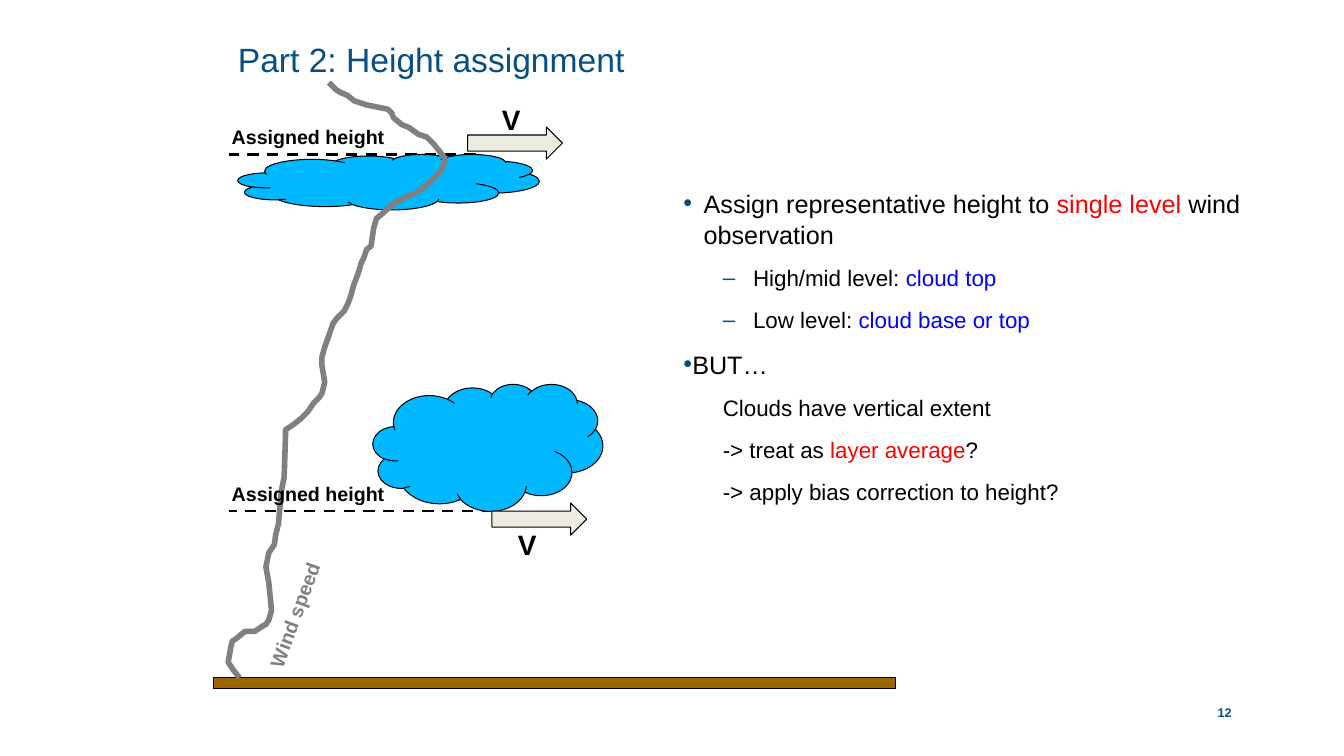
from lxml import etree
from pptx import Presentation
from pptx.dml.color import RGBColor
from pptx.enum.dml import MSO_LINE
from pptx.enum.shapes import MSO_CONNECTOR, MSO_SHAPE
from pptx.enum.text import MSO_ANCHOR, MSO_AUTO_SIZE, PP_ALIGN
from pptx.oxml.ns import qn
from pptx.util import Pt

CLOUD, ARROW, RECTANGLE = MSO_SHAPE.CLOUD, MSO_SHAPE.RIGHT_ARROW, MSO_SHAPE.RECTANGLE
STRAIGHT, DASH = MSO_CONNECTOR.STRAIGHT, MSO_LINE.DASH
TOP, MIDDLE, BOTTOM = MSO_ANCHOR.TOP, MSO_ANCHOR.MIDDLE, MSO_ANCHOR.BOTTOM
NO_RESIZE = MSO_AUTO_SIZE.NONE
LEFT, CENTER = PP_ALIGN.LEFT, PP_ALIGN.CENTER

FONT = "Arial"
NAVY = RGBColor(0x06, 0x4E, 0x83)
BLACK = RGBColor(0x00, 0x00, 0x00)
RED = RGBColor(0xFF, 0x00, 0x00)
BLUE = RGBColor(0x00, 0x00, 0xFF)
SKY = RGBColor(0x00, 0xB8, 0xFF)
BROWN = RGBColor(0x99, 0x66, 0x00)
CREAM = RGBColor(0xEE, 0xEC, 0xE1)
GRAY = RGBColor(0x80, 0x80, 0x80)

# Wind speed profile from the ground upwards, in points
WIND_PROFILE = [
    (171, 484), (167, 479), (163, 473), (165, 462), (166, 458), (169, 456),
    (175, 451), (182, 451), (188, 447), (190, 446), (192, 443), (194, 436),
    (193, 426), (192, 416), (190, 405), (192, 395), (194, 392), (196, 389),
    (197, 382), (199, 374), (201, 351), (202, 346), (203, 341), (204, 311),
    (204, 307), (207, 305), (210, 303), (215, 299), (220, 294), (224, 288),
    (228, 284), (230, 281), (232, 273), (230, 261), (230, 255), (232, 248),
    (238, 231), (241, 227), (246, 222), (249, 216), (251, 210), (252, 206),
    (253, 203), (256, 195), (258, 188), (260, 184), (262, 178), (265, 176),
    (267, 163), (269, 156), (274, 152), (276, 150), (283, 144), (288, 142),
    (291, 140), (297, 138), (304, 133), (310, 127), (315, 122), (318, 115),
    (317, 112), (310, 103), (307, 100), (305, 98), (299, 96), (292, 91),
    (287, 89), (281, 84), (280, 81), (277, 78), (262, 75), (253, 72),
    (248, 68), (243, 66), (240, 64), (235, 59),
]

# Level, left margin, first-line indent, bullet, runs
BODY = [
    (0, 14.4, -14.4, "•", [("Assign representative height to ", BLACK),
                           ("single level", RED), (" wind observation", BLACK)]),
    (1, 49.7, -21.6, "–", [("High/mid level: ", BLACK), ("cloud top", BLUE)]),
    (1, 49.7, -21.6, "–", [("Low level:", BLACK), (" cloud base or top", BLUE)]),
    (0, 0, -14.4, "•", [("BUT…", BLACK)]),
    (1, 28.1, 0, None, [("Clouds have vertical extent", BLACK)]),
    (1, 28.1, 0, None, [("-> treat as ", BLACK), ("layer average", RED), ("?", BLACK)]),
    (1, 28.1, 0, None, [("-> apply bias correction to height?", BLACK)]),
]
# Font size, line spacing and space before, by level
LEVEL_STYLES = [(18, 22, 11), (16, 20, 10)]


def place(shape, left, top, width, height):
    shape.left, shape.top = Pt(left), Pt(top)
    shape.width, shape.height = Pt(width), Pt(height)


def clear_frame(frame, anchor):
    frame.margin_left = frame.margin_right = 0
    frame.margin_top = frame.margin_bottom = 0
    frame.word_wrap = True
    frame.auto_size = NO_RESIZE
    frame.vertical_anchor = anchor


def style_font(font, size, color, bold=False):
    font.name, font.size, font.bold = FONT, Pt(size), bold
    font.color.rgb = color


def set_bullet(paragraph, margin, indent, bullet):
    properties = paragraph._p.get_or_add_pPr()
    properties.set("marL", str(Pt(margin)))
    properties.set("indent", str(Pt(indent)))
    if bullet is None:
        etree.SubElement(properties, qn("a:buNone"))
        return
    color = etree.SubElement(properties, qn("a:buClr"))
    etree.SubElement(color, qn("a:srgbClr"), val=str(NAVY))
    etree.SubElement(properties, qn("a:buFont"), typeface=FONT)
    etree.SubElement(properties, qn("a:buChar"), char=bullet)


def fill_title(title):
    place(title, 169.9, 28.1, 465.1, 28.8)
    clear_frame(title.text_frame, MIDDLE)
    title.text_frame.text = "Part 2: Height assignment"
    paragraph = title.text_frame.paragraphs[0]
    paragraph.alignment = LEFT
    paragraph.line_spacing = Pt(28)
    style_font(paragraph.font, 24, NAVY)


def fill_body(body):
    place(body, 488.2, 133.9, 414.7, 310.3)
    frame = body.text_frame
    clear_frame(frame, TOP)
    for index, (level, margin, indent, bullet, runs) in enumerate(BODY):
        paragraph = frame.paragraphs[0] if index == 0 else frame.add_paragraph()
        size, line_spacing, space_before = LEVEL_STYLES[level]
        paragraph.level = level
        set_bullet(paragraph, margin, indent, bullet)
        paragraph.line_spacing = Pt(line_spacing)
        paragraph.space_before = Pt(space_before if index else 0)
        style_font(paragraph.font, size, BLACK)
        for text, color in runs:
            run = paragraph.add_run()
            run.text = text
            run.font.color.rgb = color


def add_label(slide, text, box, size, color=BLACK, rotation=0):
    label = slide.shapes.add_textbox(*map(Pt, box))
    label.rotation = rotation
    label.text_frame.word_wrap = True
    label.text_frame.text = text
    style_font(label.text_frame.paragraphs[0].font, size, color, bold=True)
    return label


def add_figure(slide, kind, box, color):
    figure = slide.shapes.add_shape(kind, *map(Pt, box))
    figure.shadow.inherit = False
    figure.fill.solid()
    figure.fill.fore_color.rgb = color
    figure.line.color.rgb = BLACK
    figure.line.width = Pt(0.75)


def add_height_line(slide, right, y):
    line = slide.shapes.add_connector(STRAIGHT, Pt(right), Pt(y), Pt(163.4), Pt(y))
    line.line.color.rgb = BLACK
    line.line.width = Pt(2)
    line.line.dash_style = DASH
    etree.SubElement(line._element.spPr, qn("a:effectLst"))


def add_wind_profile(slide):
    builder = slide.shapes.build_freeform(*WIND_PROFILE[0], scale=Pt(1))
    builder.add_line_segments(WIND_PROFILE[1:], close=False)
    profile = builder.convert_to_shape()
    profile.shadow.inherit = False
    profile.fill.background()
    profile.line.color.rgb = GRAY
    profile.line.width = Pt(4)


def main():
    presentation = Presentation()
    presentation.slide_width, presentation.slide_height = Pt(960), Pt(540)
    slide = presentation.slides.add_slide(presentation.slide_layouts[1])

    # Title, list and slide number
    fill_title(slide.shapes.title)
    fill_body(slide.placeholders[1])
    number = add_label(slide, "12", (789.8, 496.8, 169.9, 17.3), 9, NAVY)
    clear_frame(number.text_frame, BOTTOM)
    number.text_frame.paragraphs[0].alignment = CENTER

    # Clouds, height lines and ground
    add_height_line(slide, 339.8, 110.2)
    add_height_line(slide, 352.1, 365)
    add_figure(slide, CLOUD, (169.9, 110.2, 215.3, 39.6), SKY)
    add_figure(slide, CLOUD, (266.4, 274.3, 164.2, 90.7), SKY)
    add_figure(slide, RECTANGLE, (152.6, 483.8, 487.4, 7.9), BROWN)

    # Wind speed curve
    add_wind_profile(slide)
    add_label(slide, "Wind speed", (160.6, 421.9, 103.7, 24.5), 14, GRAY, rotation=290)

    # Assigned heights and wind vectors
    for top in (85.7, 340.6):
        add_label(slide, "Assigned height", (158.4, top, 289.4, 24.5), 14)
    for left, top in ((334.1, 90.7), (351.4, 359.3)):
        add_figure(slide, ARROW, (left, top, 67.7, 23), CREAM)
    for left, top in ((351.4, 69.8), (362.9, 373)):
        add_label(slide, "V", (left, top, 33.8, 31.7), 20)

    presentation.save("out.pptx")


if __name__ == "__main__":
    main()
